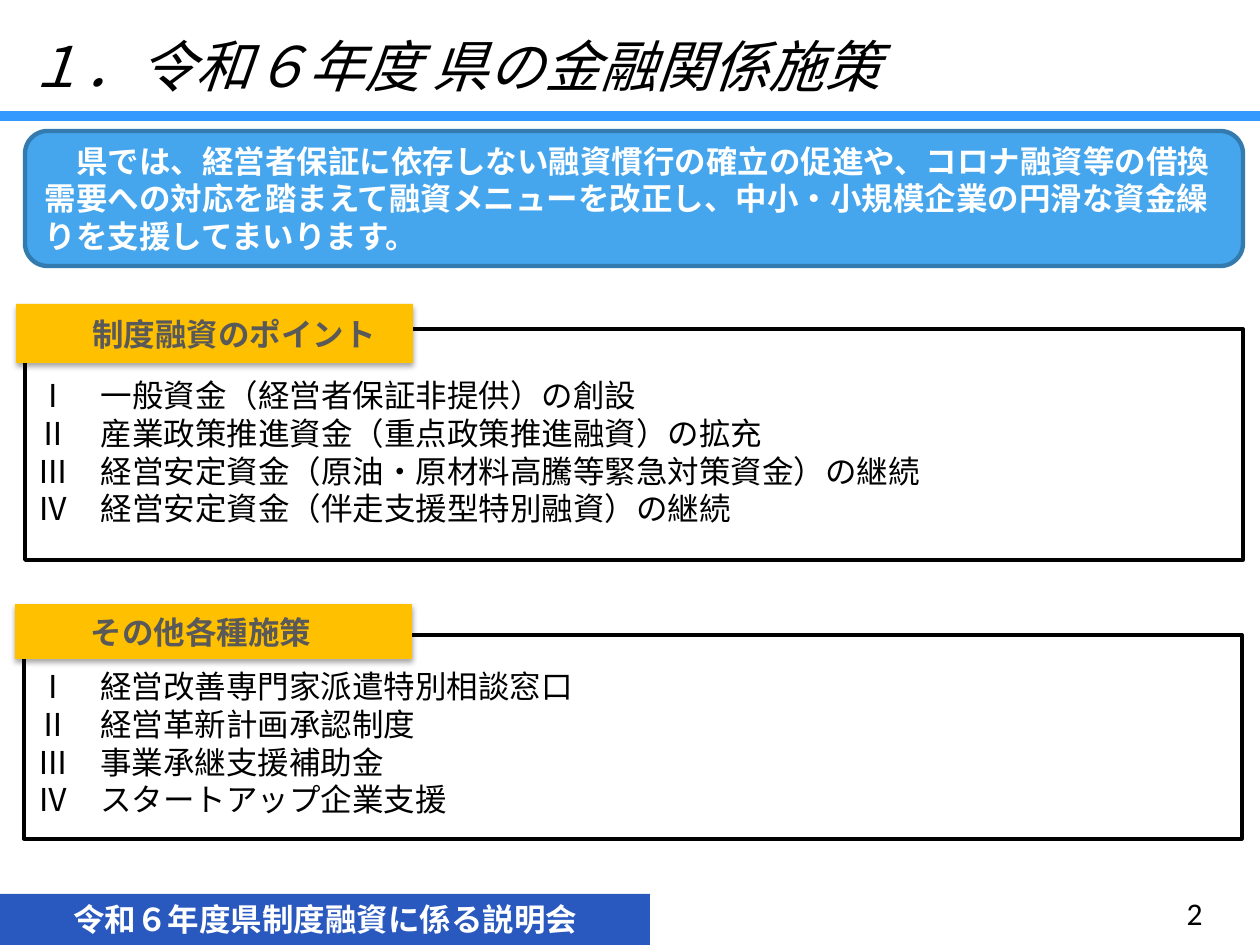
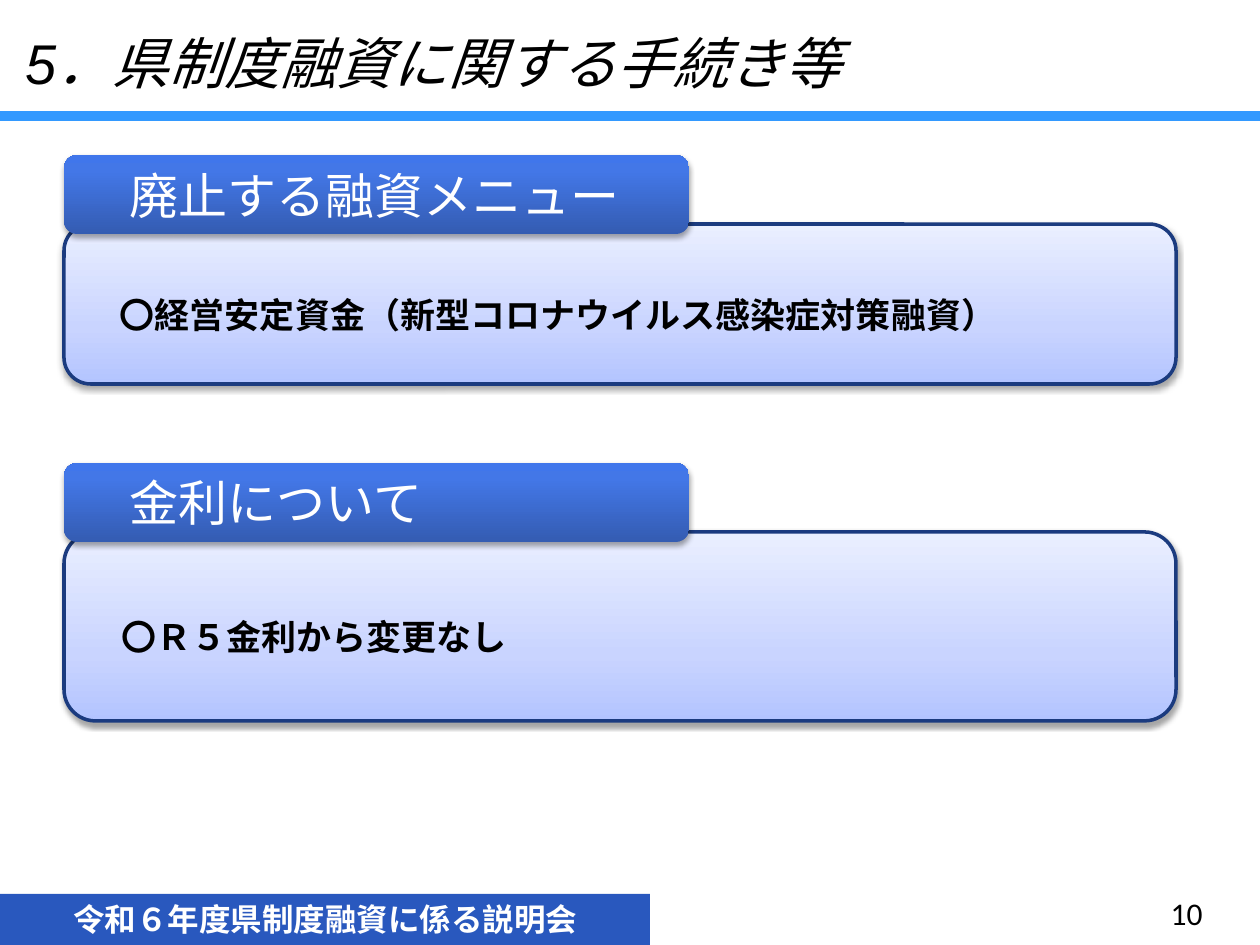
from dataclasses import dataclass

from lxml import etree
from pptx import Presentation
from pptx.dml.color import RGBColor
from pptx.enum import shapes, text
from pptx.oxml import ns
from pptx.util import Emu, Pt

PX = 914400 / 126


@dataclass(frozen=True)
class Theme:
    white: str = "FFFFFF"
    black: str = "000000"
    rule: str = "3399FF"
    footer: str = "2958BE"
    banner: str = "45A5ED"
    banner_edge: str = "337AAF"
    label: str = "FFC000"
    label_text: str = "595959"
    card_edge: str = "1B3B7F"
    card_stops: tuple = ((0, "B3C4FF"), (35, "C9D4FF"), (100, "EAEFFF"))
    heading_stops: tuple = ((0, "345CB2"), (80, "4377E7"), (100, "4076EB"))
    cjk: str = "Noto Sans CJK JP"
    title_font: str = "Arial"
    label_font: str = "Calibri"
    title_size: int = 32
    heading_size: int = 28
    card_size: int = 20
    body_size: int = 18


THEME = Theme()
RECT = shapes.MSO_SHAPE.RECTANGLE
ROUNDED = shapes.MSO_SHAPE.ROUNDED_RECTANGLE
MIDDLE = text.MSO_ANCHOR.MIDDLE
TOP = text.MSO_ANCHOR.TOP


def px(*lengths):
    return [Emu(round(length * PX)) for length in lengths]


def add_xml(parent, tag, **attributes):
    return etree.SubElement(parent, ns.qn(tag), attributes)


def add_box(slide, box, kind=RECT, fill=None, edge=None, edge_pt=2):
    """Add a shape; fill is a colour, a tuple of gradient stops or None."""
    shape = slide.shapes.add_shape(kind, *px(*box))
    shape.shadow.inherit = False
    if fill is None:
        shape.fill.background()
    elif isinstance(fill, str):
        shape.fill.solid()
        shape.fill.fore_color.rgb = RGBColor.from_string(fill)
    else:
        shape.fill.gradient()
        shape.fill.gradient_angle = 90
        stops = shape._element.spPr.find(ns.qn("a:gradFill")).find(ns.qn("a:gsLst"))
        for stop in list(stops):
            stops.remove(stop)
        for percent, colour in fill:
            stop = add_xml(stops, "a:gs", pos=str(percent * 1000))
            add_xml(stop, "a:srgbClr", val=colour)
    if edge:
        shape.line.color.rgb = RGBColor.from_string(edge)
        shape.line.width = Pt(edge_pt)
    else:
        shape.line.fill.background()
    return shape


def drop_shadow(shape):
    effects = shape._element.spPr.find(ns.qn("a:effectLst"))
    shadow = add_xml(effects, "a:outerShdw", blurRad=str(Pt(3.1)), dist=str(Pt(1.8)),
                     dir="5400000", rotWithShape="0")
    colour = add_xml(shadow, "a:srgbClr", val=THEME.black)
    add_xml(colour, "a:alpha", val="35000")


def write(shape, lines, size=THEME.body_size, colour=THEME.black, font=THEME.cjk,
          bold=False, italic=False, align=text.PP_ALIGN.LEFT, anchor=MIDDLE,
          left=13, top=6):
    frame = shape.text_frame
    frame.word_wrap = True
    frame.vertical_anchor = anchor
    frame.margin_left, frame.margin_top = px(left, top)
    frame.text = "\n".join(lines)
    for paragraph in frame.paragraphs:
        paragraph.alignment = align
        for run in paragraph.runs:
            run.font.size = Pt(size)
            run.font.bold = bold
            run.font.italic = italic
            run.font.color.rgb = RGBColor.from_string(colour)
            run.font.name = font
            add_xml(run._r.rPr, "a:ea", typeface=THEME.cjk)
    return frame


def add_page(deck, title, title_box, title_left, number):
    """Add a slide with its title, rule, footer band and page number."""
    slide = deck.slides.add_slide(deck.slide_layouts[6])
    rule = slide.shapes.add_connector(shapes.MSO_CONNECTOR.STRAIGHT, *px(0, 116, 1260, 116))
    rule.line.color.rgb = RGBColor.from_string(THEME.rule)
    rule.line.width = Pt(6)
    add_xml(rule._element.spPr, "a:effectLst")

    footer = add_box(slide, (0, 894, 650, 51), fill=THEME.footer)
    write(footer, ["令和６年度県制度融資に係る説明会"], colour=THEME.white, bold=True,
          align=text.PP_ALIGN.CENTER, anchor=TOP)
    write(slide.shapes.add_textbox(*px(*title_box)), [title], size=THEME.title_size,
          font=THEME.title_font, italic=True, anchor=TOP, left=title_left)
    write(slide.shapes.add_textbox(*px(921, 888, 294, 50)), [number],
          font=THEME.label_font, align=text.PP_ALIGN.RIGHT)
    return slide


def add_banner(slide, box, message):
    banner = add_box(slide, box, ROUNDED, THEME.banner, THEME.banner_edge, 2.5)
    frame = write(banner, [message], colour=THEME.white, bold=True)
    frame.paragraphs[0]._p.get_or_add_pPr().set("indent", str(Pt(THEME.body_size)))


def add_measures(slide, box, label, label_rise, label_height, items, top):
    """Add an outlined list with a label over its top left corner."""
    x, y, _, _ = box
    panel = add_box(slide, box, edge=THEME.black)
    write(panel, items, anchor=TOP, top=top)
    tab = add_box(slide, (x - 9, y - label_rise, 397, label_height), fill=THEME.label)
    drop_shadow(tab)
    write(tab, [label], colour=THEME.label_text, font=THEME.label_font, bold=True, left=76)


def add_card(slide, box, heading, statement):
    """Add a shaded card with a heading tab above its top left corner."""
    x, y, _, _ = box
    card = add_box(slide, box, ROUNDED, THEME.card_stops, THEME.card_edge)
    drop_shadow(card)
    frame = write(card, [statement], size=THEME.card_size, bold=True, left=48)
    frame.paragraphs[0].line_spacing = 1.5
    tab = add_box(slide, (x, y - 69, 625, 79), ROUNDED, THEME.heading_stops)
    drop_shadow(tab)
    write(tab, [heading], size=THEME.heading_size, colour=THEME.white,
          font=THEME.label_font, left=62)


def build_policy_slide(deck):
    slide = add_page(deck, "１．令和６年度 県の金融関係施策", (0, 25, 1216, 81), 28, "2")
    add_banner(slide, (25, 131, 1218, 135),
               "県では、経営者保証に依存しない融資慣行の確立の促進や、コロナ融資等の借換"
               "需要への対応を踏まえて融資メニューを改正し、中小・小規模企業の円滑な資金繰"
               "りを支援してまいります。")
    add_measures(slide, (25, 329, 1218, 231), "制度融資のポイント", 25, 59, [
        "Ⅰ　一般資金（経営者保証非提供）の創設",
        "Ⅱ　産業政策推進資金（重点政策推進融資）の拡充",
        "Ⅲ　経営安定資金（原油・原材料高騰等緊急対策資金）の継続",
        "Ⅳ　経営安定資金（伴走支援型特別融資）の継続",
    ], top=47)
    add_measures(slide, (24, 635, 1218, 204), "その他各種施策", 31, 55, [
        "Ⅰ　経営改善専門家派遣特別相談窓口",
        "Ⅱ　経営革新計画承認制度",
        "Ⅲ　事業承継支援補助金",
        "Ⅳ　スタートアップ企業支援",
    ], top=32)


def build_procedure_slide(deck):
    slide = add_page(deck, "5．県制度融資に関する手続き等", (0, 23, 1027, 149), 25, "10")
    add_card(slide, (64, 224, 1112, 160), "廃止する融資メニュー",
             "〇経営安定資金（新型コロナウイルス感染症対策融資）")
    add_card(slide, (64, 532, 1112, 189), "金利について", "〇Ｒ５金利から変更なし")


def main():
    deck = Presentation()
    deck.slide_width, deck.slide_height = px(1260, 945)
    build_policy_slide(deck)
    build_procedure_slide(deck)
    deck.save("out.pptx")


if __name__ == "__main__":
    main()
